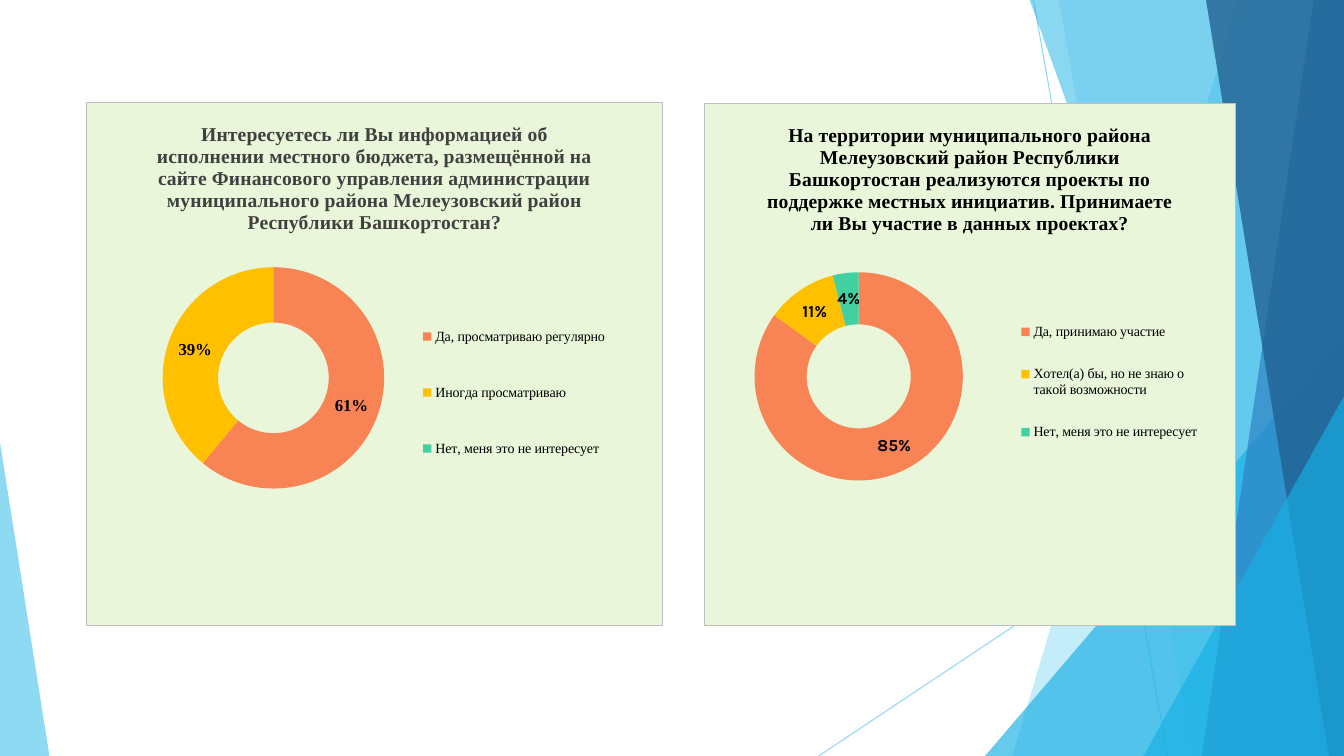
from lxml.etree import SubElement
from pptx import Presentation
from pptx.chart.data import CategoryChartData
from pptx.dml.color import RGBColor
from pptx.enum.chart import XL_CHART_TYPE, XL_LEGEND_POSITION
from pptx.enum.shapes import MSO_CONNECTOR, MSO_SHAPE
from pptx.oxml import parse_xml
from pptx.oxml.ns import nsdecls, qn
from pptx.util import Inches, Pt

WIDE, HIGH = 13.33, 7.5
SKY = RGBColor(0x5F, 0xCB, 0xEF)
CYAN = RGBColor(0x17, 0xB0, 0xE4)
BLUE = RGBColor(0x2E, 0x83, 0xC3)
NAVY = RGBColor(0x22, 0x62, 0x92)
CORAL = RGBColor(0xF8, 0x84, 0x56)
GOLD = RGBColor(0xFF, 0xC0, 0x00)
MINT = RGBColor(0x42, 0xD0, 0xA2)
BLACK = RGBColor(0, 0, 0)
GRAY = RGBColor(0x40, 0x40, 0x40)
PALE = RGBColor(0xEA, 0xF6, 0xD9)
EDGE = RGBColor(0xBF, 0xBF, 0xBF)
SERIF, SANS = "Times New Roman", "Karla"


def style(font, size, name=SERIF, bold=False, color=BLACK):
    """Set the look of a font."""
    font.size, font.name, font.bold = Pt(size), name, bold
    font.color.rgb = color


def write(frame, text, **look):
    """Put formatted text in a text frame."""
    frame.text = text
    style(frame.paragraphs[0].runs[0].font, **look)


def fade(shape, alpha):
    """Make the solid colour of a shape partly opaque."""
    tint = shape.element.xpath(".//a:solidFill/a:srgbClr")[0]
    SubElement(tint, qn("a:alpha")).set("val", str(alpha * 1000))


def paint(shape, color, alpha):
    """Fill a shape with a translucent colour and no outline."""
    shape.shadow.inherit = False
    shape.fill.solid()
    shape.fill.fore_color.rgb = color
    shape.line.fill.background()
    fade(shape, alpha)


def ray(slide, start, end):
    """Draw a thin line of the backdrop."""
    line = slide.shapes.add_connector(
        MSO_CONNECTOR.STRAIGHT, *map(Inches, start + end))
    line.line.color.rgb, line.line.width = SKY, Pt(0.75)
    fade(line, 70)
    SubElement(line.element.spPr, qn("a:effectLst"))


def band(slide, top, foot, color, alpha):
    """Draw a band from a slanted left edge to the right slide edge."""
    build = slide.shapes.build_freeform(Inches(top), Inches(-0.01))
    ends = [(WIDE, -0.01), (WIDE, HIGH), (foot, HIGH)]
    build.add_line_segments([(Inches(x), Inches(y)) for x, y in ends])
    paint(build.convert_to_shape(), color, alpha)


def wedge(slide, left, top, width, tip, color, alpha):
    """Draw a triangle that stands on the bottom slide edge."""
    shape = slide.shapes.add_shape(
        MSO_SHAPE.ISOSCELES_TRIANGLE,
        *map(Inches, (left, top, width, HIGH - top)))
    shape.adjustments[0] = tip
    paint(shape, color, alpha)


def backdrop(slide):
    """Draw the facets behind the charts."""
    ray(slide, (10.25, 0), (11.58, HIGH))
    ray(slide, (WIDE, 4.03), (8.12, HIGH))
    band(slide, 12.28, 10.04, SKY, 36)
    band(slide, 10.5, 11.83, SKY, 20)
    wedge(slide, 9.77, 3.33, 3.56, 1, CYAN, 66)
    band(slide, 10.21, 12.91, CYAN, 50)
    band(slide, 13.03, 11.92, BLUE, 70)
    band(slide, 11.96, 13.18, NAVY, 80)
    wedge(slide, 11.34, 3.93, 1.99, 1, CYAN, 66)
    wedge(slide, 0, 4.39, 0.49, 0, SKY, 70)


def place(part, spot, box, area, target=""):
    """Lay out a chart part at an area in inches within the chart box."""
    for old in part.xpath("c:layout"):
        part.remove(old)
    modes = '<c:xMode val="edge"/><c:yMode val="edge"/>'
    sizes = "".join(f'<c:{key} val="{size / full:.4f}"/>'
                    for key, size, full in zip("xywh", area, box[2:] * 2))
    part.insert(spot, parse_xml(
        f'<c:layout {nsdecls("c")}><c:manualLayout>{target}{modes}{sizes}'
        '</c:manualLayout></c:layout>'))


def fence(chart):
    """Give the chart area its fill and border."""
    area = parse_xml(
        f'<c:spPr {nsdecls("c", "a")}><a:solidFill><a:srgbClr val="{PALE}"/>'
        f'</a:solidFill><a:ln w="{Pt(0.75)}"><a:solidFill>'
        f'<a:srgbClr val="{EDGE}"/></a:solidFill></a:ln></c:spPr>')
    chart.element.xpath("c:chart")[0].addnext(area)


def ring(slide, box, title, names, values, tone, face, size, plot, key):
    """Draw one survey question as a doughnut chart in the box."""
    data = CategoryChartData()
    data.categories = names
    data.add_series("Series 1", values)
    chart = slide.shapes.add_chart(
        XL_CHART_TYPE.DOUGHNUT, *map(Inches, box), data).chart
    style(chart.font, size, face)
    fence(chart)
    chart.has_title = True
    write(chart.chart_title.text_frame, title, size=14, bold=True, color=tone)
    chart.chart_title.include_in_layout = False

    chart.has_legend = True
    chart.legend.position = XL_LEGEND_POSITION.RIGHT
    chart.legend.include_in_layout = False
    style(chart.legend.font, 10)
    place(chart.element.xpath(".//c:legend")[0], 1, box, key)
    place(chart.element.xpath(".//c:plotArea")[0], 0, box, plot,
          '<c:layoutTarget val="inner"/>')

    chart.plots[0].vary_by_categories = True
    series = chart.plots[0].series[0]
    for spot, color in enumerate((CORAL, GOLD, MINT)):
        fill = series.points[spot].format.fill
        fill.solid()
        fill.fore_color.rgb = color
    labels = series.data_labels
    labels.show_percentage, labels.show_value = True, False
    labels.number_format, labels.number_format_is_linked = "0%", False
    style(labels.font, 12, face, True)
    group = chart.element.xpath(".//c:ser/c:dLbls")[0]
    for spot, value in enumerate(values):
        if not value:
            group.insert(0, parse_xml(
                f'<c:dLbl {nsdecls("c")}><c:idx val="{spot}"/>'
                '<c:delete val="1"/></c:dLbl>'))


def main():
    """Build and save the survey slide."""
    deck = Presentation()
    deck.slide_width, deck.slide_height = Inches(WIDE), Inches(HIGH)
    slide = deck.slides.add_slide(deck.slide_layouts[6])
    backdrop(slide)
    ring(slide, (0.85, 1.01, 5.73, 5.2),
         "Интересуетесь ли Вы информацией об исполнении местного бюджета, "
         "размещённой на сайте Финансового управления администрации "
         "муниципального района Мелеузовский район Республики Башкортостан?",
         ["Да, просматриваю регулярно", "Иногда просматриваю",
          "Нет, меня это не интересует"], (61, 39, 0), GRAY, SERIF, 10,
         plot=(0.48, 1.64, 2.76, 2.2), key=(3.32, 1.85, 1.86, 2.07))
    ring(slide, (6.98, 1.02, 5.28, 5.19),
         "На территории муниципального района Мелеузовский район Республики "
         "Башкортостан реализуются проекты по поддержке местных инициатив. "
         "Принимаете ли Вы участие в данных проектах?",
         ["Да, принимаю участие",
          "Хотел(а) бы, но не знаю о такой возможности",
          "Нет, меня это не интересует"], (85, 11, 4), BLACK, SANS, 6,
         plot=(0.33, 1.68, 2.41, 2.07), key=(3.1, 1.93, 1.85, 1.68))
    deck.save("out.pptx")


if __name__ == "__main__":
    main()
